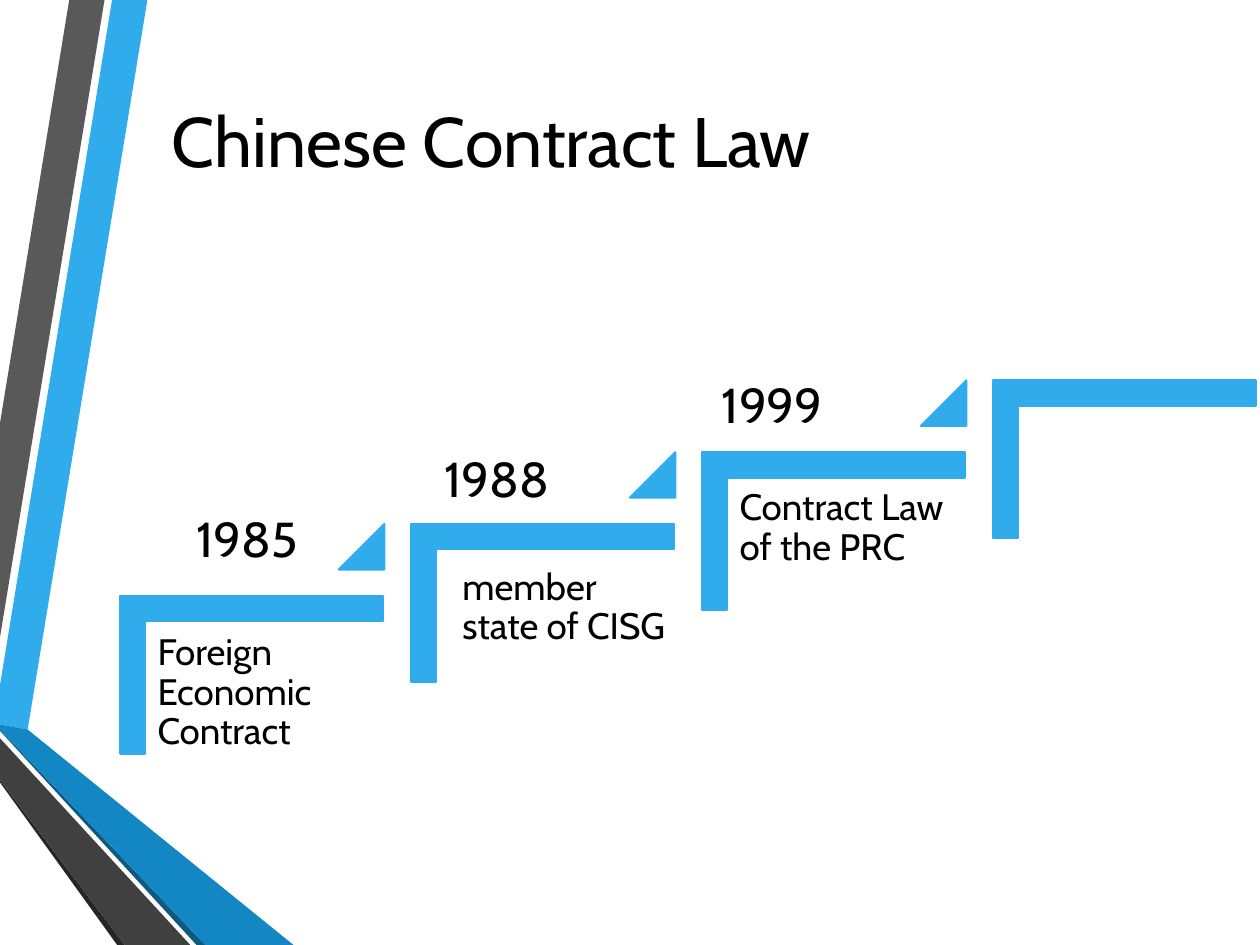
from pptx import Presentation
from pptx.dml.color import RGBColor
from pptx.enum.shapes import MSO_SHAPE
from pptx.enum.text import MSO_ANCHOR
from pptx.util import Inches, Pt

FONT = "Cabin"
COLORS = {
    "blue": "30ACEC", "mid": "1287C3", "deep": "0C5A82",
    "grey": "595959", "dark": "404040", "black": "262626",
    "text": "000000",
}

# Ribbon outlines, in inches from the corner of the slide, back to front
RIBBONS = [
    ("blue", [(0, 5.44), (0, 5.75), (0.22, 5.79), (1.17, 0), (0.89, 0)]),
    ("grey", [(0.83, 0), (0.55, 0), (0, 3.36), (0, 5.06)]),
    ("black", [(0, 6.19), (0, 6.21), (0.93, 7.5), (0.99, 7.5)]),
    ("deep", [(0, 5.79), (0, 5.8), (1.56, 7.5), (1.63, 7.5)]),
    ("mid", [(0, 5.79), (1.63, 7.5), (2.33, 7.5), (0.22, 5.79), (0, 5.75)]),
    ("dark", [(0, 6.19), (0.99, 7.5), (1.51, 7.5), (0, 5.86)]),
]

# Year, its box (dx, dy, width), label, its offset (dx, dy) from the step
STEPS = [
    ("1985", (0.51, -0.74, 1.64), "Foreign Economic Contract", (0.21, 0.21)),
    ("1988", (0.17, -0.65, 1.34), "member state of CISG", (0.32, 0.26)),
    ("1999", (0.06, -0.67, 1.5), "Contract Law of the PRC", (0.21, 0.2)),
    None,
]
STEP_W, STEP_H = 2.09, 1.25
RUN, RISE = 2.31, 0.57


def paint(shape, name, line=None):
    color = RGBColor.from_string(COLORS[name])
    shape.shadow.inherit = False
    shape.fill.solid()
    shape.fill.fore_color.rgb = color
    if line:
        shape.line.color.rgb = color
        shape.line.width = Pt(line)
    else:
        shape.line.fill.background()


def add_text(slide, text, box, size, pad=(0.1, 0.05), anchor=MSO_ANCHOR.TOP,
             lead=None):
    frame = slide.shapes.add_textbox(*map(Inches, box)).text_frame
    frame.word_wrap = True
    frame.vertical_anchor = anchor
    frame.margin_left = frame.margin_right = Inches(pad[0])
    frame.margin_top = frame.margin_bottom = Inches(pad[1])
    frame.text = text
    para = frame.paragraphs[0]
    para.line_spacing = lead
    font = para.runs[0].font
    font.name, font.size = FONT, Pt(size)
    font.color.rgb = RGBColor.from_string(COLORS["text"])


def add_ribbons(slide, left, top):
    for name, points in RIBBONS:
        spots = [(Inches(left + x), Inches(top + y)) for x, y in points]
        form = slide.shapes.build_freeform(*spots[0])
        form.add_line_segments(spots[1:], close=True)
        paint(form.convert_to_shape(), name)


def add_corner(slide, left, top):
    """Add an L shape turned a quarter, so its box is set about its centre."""
    shift = (STEP_W - STEP_H) / 2
    corner = slide.shapes.add_shape(
        MSO_SHAPE.CORNER, Inches(left + shift), Inches(top - shift),
        Inches(STEP_H), Inches(STEP_W))
    corner.rotation = 90
    corner.adjustments[0] = corner.adjustments[1] = 0.16
    paint(corner, "blue", 1.25)


def add_rise(slide, left, top):
    """Add the small triangle that leads up to the next step."""
    side = Inches(0.36)
    rise = slide.shapes.add_shape(
        MSO_SHAPE.ISOSCELES_TRIANGLE, Inches(left), Inches(top), side, side)
    rise.adjustments[0] = 1
    paint(rise, "blue", 1.25)


def add_stairs(slide, left, top):
    for i, step in enumerate(STEPS):
        x, y = left + i * RUN, top - i * RISE
        add_corner(slide, x, y)
        if step is None:
            continue
        year, (dx, dy, width), label, (lx, ly) = step
        add_rise(slide, x + 1.74, y - RISE)
        add_text(slide, label, (x + lx, y + ly, 1.89, 1.65), 21,
                 pad=(0.09, 0.09), lead=0.9)
        add_text(slide, year, (x + dx, y + dy, width, 0.57), 28)


def main():
    deck = Presentation()
    deck.slide_width, deck.slide_height = Inches(10), Inches(7.5)
    slide = deck.slides.add_slide(deck.slide_layouts[6])
    add_ribbons(slide, 0, 0)
    add_text(slide, " Chinese Contract Law", (1.14, 0.68, 7.09, 0.86), 40,
             anchor=MSO_ANCHOR.MIDDLE)
    add_stairs(slide, 0.95, 4.73)
    deck.save("out.pptx")


if __name__ == "__main__":
    main()
